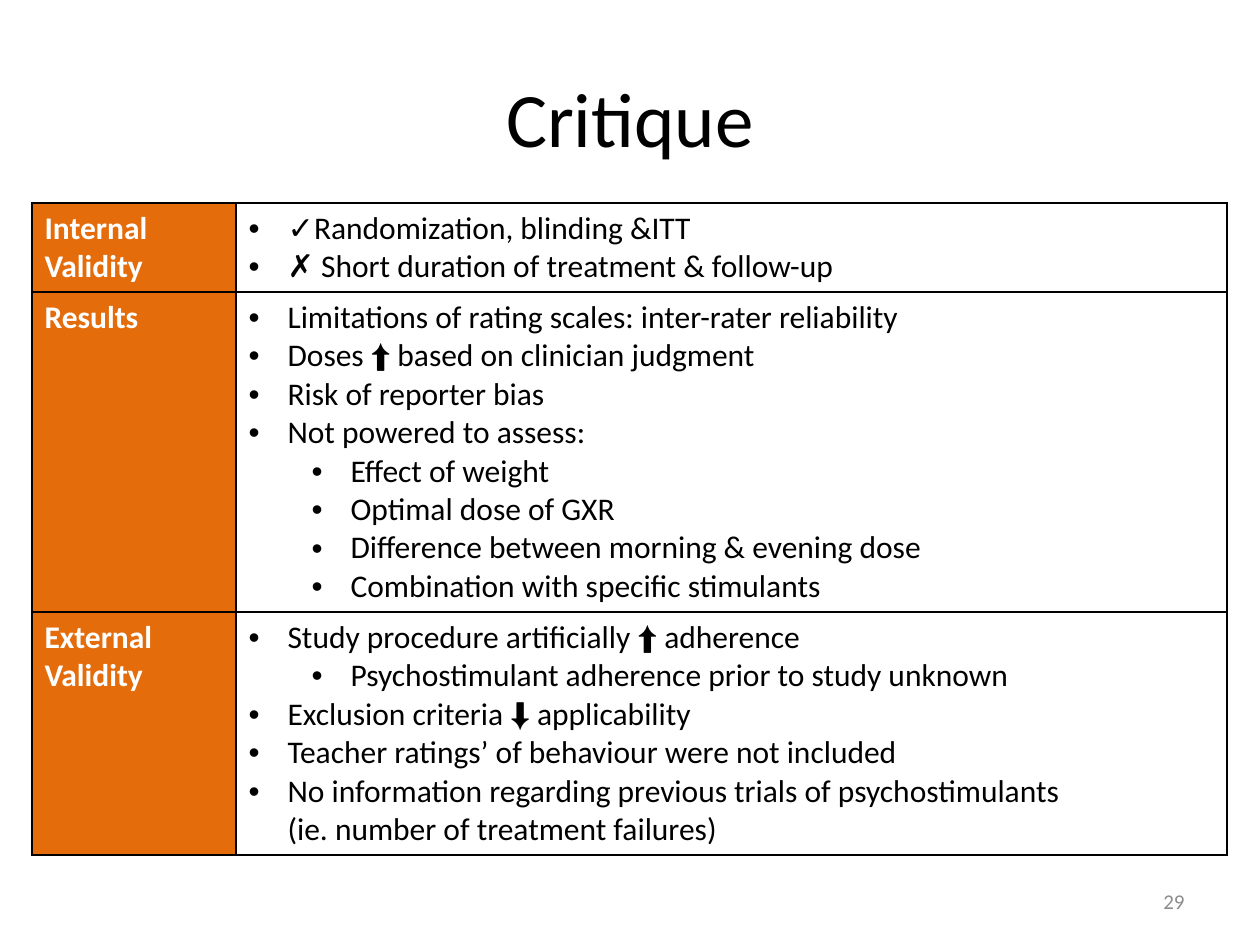
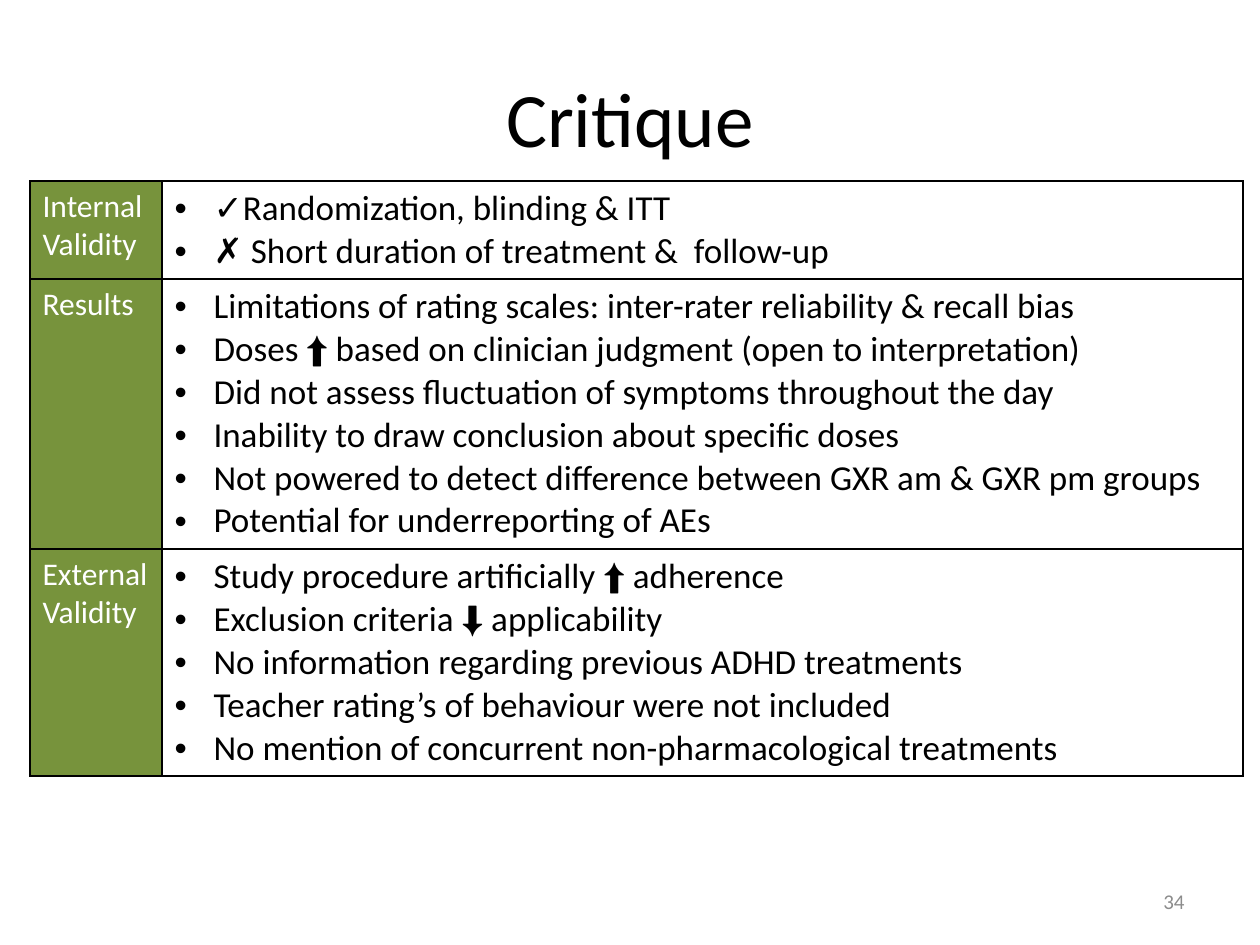
"""Build two critique slides, each with a title, a table and a page number."""
import itertools
import pptx
import pptx.dml.color
import pptx.enum.text
import pptx.oxml
import pptx.oxml.ns
import pptx.util
from lxml import etree

HUES = {"ink": "000000", "paper": "FFFFFF", "page": "8C8C8C",
        "orange": "E46C0A", "green": "77933C"}
FONT, SIGN_FONT = "Calibri", "Arial"
SIGNS = "✓✗⬆⬇"
BULLET = "•"
HANG, STEP = 39, 63
ALIGN = pptx.enum.text.PP_ALIGN
MIDDLE = pptx.enum.text.MSO_ANCHOR.MIDDLE

ORANGE_ROWS = [
    ("Internal Validity", [
        (0, "✓Randomization, blinding &ITT"),
        (0, "✗ Short duration of treatment & follow-up")]),
    ("Results", [
        (0, "Limitations of rating scales: inter-rater reliability"),
        (0, "Doses ⬆ based on clinician judgment"),
        (0, "Risk of reporter bias"),
        (0, "Not powered to assess:"),
        (1, "Effect of weight"),
        (1, "Optimal dose of GXR"),
        (1, "Difference between morning & evening dose"),
        (1, "Combination with specific stimulants")]),
    ("External Validity", [
        (0, "Study procedure artificially ⬆ adherence"),
        (1, "Psychostimulant adherence prior to study unknown"),
        (0, "Exclusion criteria ⬇ applicability"),
        (0, "Teacher ratings’ of behaviour were not included"),
        (0, "No information regarding previous trials of psychostimulants\n"
            "(ie. number of treatment failures)")]),
]
GREEN_ROWS = [
    ("Internal Validity", [
        (0, "✓Randomization, blinding & ITT"),
        (0, "✗ Short duration of treatment &  follow-up")]),
    ("Results", [
        (0, "Limitations of rating scales: inter-rater reliability & recall bias"),
        (0, "Doses ⬆ based on clinician judgment (open to interpretation)"),
        (0, "Did not assess fluctuation of symptoms throughout the day"),
        (0, "Inability to draw conclusion about specific doses"),
        (0, "Not powered to detect difference between GXR am & GXR pm groups"),
        (0, "Potential for underreporting of AEs")]),
    ("External Validity", [
        (0, "Study procedure artificially ⬆ adherence"),
        (0, "Exclusion criteria ⬇ applicability"),
        (0, "No information regarding previous ADHD treatments"),
        (0, "Teacher rating’s of behaviour were not included"),
        (0, "No mention of concurrent non-pharmacological treatments")]),
]


def emu(px):
    return pptx.util.Emu(round(px * 914400 / 126))


def rgb(hue):
    return pptx.dml.color.RGBColor.from_string(HUES[hue])


class Deck:
    def __init__(self):
        self.show = pptx.Presentation()
        self.show.slide_width, self.show.slide_height = emu(1260), emu(945)
        self.slide = None

    def start(self):
        self.slide = self.show.slides.add_slide(self.show.slide_layouts[5])

    def runs(self, para, text, size, hue, bold=False):
        for n, line in enumerate(text.split("\n")):
            if n:
                para.add_line_break()
            for sign, part in itertools.groupby(line, lambda c: c in SIGNS):
                run = para.add_run()
                run.text = "".join(part)
                font = run.font
                font.name = SIGN_FONT if sign else FONT
                font.size, font.bold = pptx.util.Pt(size), bold
                font.color.rgb = rgb(hue)

    def title(self, text):
        shape = self.slide.shapes.title
        shape.left, shape.top = emu(63), emu(38)
        shape.width, shape.height = emu(1134), emu(158)
        shape.text_frame.vertical_anchor = MIDDLE
        para = shape.text_frame.paragraphs[0]
        para.alignment = ALIGN.CENTER
        self.runs(para, text, 44, "ink")

    def page(self, text):
        frame = self.slide.shapes.add_textbox(
            emu(903), emu(876), emu(294), emu(50)).text_frame
        frame.word_wrap = True
        frame.vertical_anchor = MIDDLE
        para = frame.paragraphs[0]
        para.alignment = ALIGN.RIGHT
        self.runs(para, text, 12, "page")

    def border(self, cell):
        props = cell._tc.get_or_add_tcPr()
        for n, side in enumerate(("lnL", "lnR", "lnT", "lnB")):
            props.insert(n, pptx.oxml.parse_xml(
                f'<a:{side} {pptx.oxml.ns.nsdecls("a")} w="12700"><a:solidFill>'
                f'<a:srgbClr val="{HUES["ink"]}"/></a:solidFill></a:{side}>'))

    def bullets(self, frame, items, size):
        for n, (level, text) in enumerate(items):
            para = frame.add_paragraph() if n else frame.paragraphs[0]
            para.level = level
            props = para._p.get_or_add_pPr()
            props.set("marL", str(emu(HANG + STEP * level)))
            props.set("indent", str(-emu(HANG)))
            qn = pptx.oxml.ns.qn
            etree.SubElement(props, qn("a:buFont")).set("typeface", SIGN_FONT)
            etree.SubElement(props, qn("a:buChar")).set("char", BULLET)
            self.runs(para, text, size, "ink")

    def table(self, left, top, widths, heights, rows, hue, size, bold):
        grid = self.slide.shapes.add_table(
            len(rows), 2, emu(left), emu(top),
            emu(sum(widths)), emu(sum(heights))).table
        grid.first_row = grid.horz_banding = False
        for col, width in zip(grid.columns, widths):
            col.width = emu(width)
        for row, height, (label, items) in zip(grid.rows, heights, rows):
            row.height = emu(height)
            head, body = row.cells
            head.fill.solid()
            head.fill.fore_color.rgb = rgb(hue)
            body.fill.background()
            self.runs(head.text_frame.paragraphs[0], label, 18, "paper", bold)
            self.bullets(body.text_frame, items, size)
            for cell in (head, body):
                self.border(cell)


def main():
    deck = Deck()
    plans = [
        ("29", (32, 203, (204, 991), (89, 320, 243), ORANGE_ROWS, "orange", 18, True)),
        ("34", (30, 181, (132, 1081), (98, 270, 227), GREEN_ROWS, "green", 20, False)),
    ]
    for number, plan in plans:
        deck.start()
        deck.title("Critique")
        deck.page(number)
        deck.table(*plan)
    deck.show.save("out.pptx")


if __name__ == "__main__":
    main()
